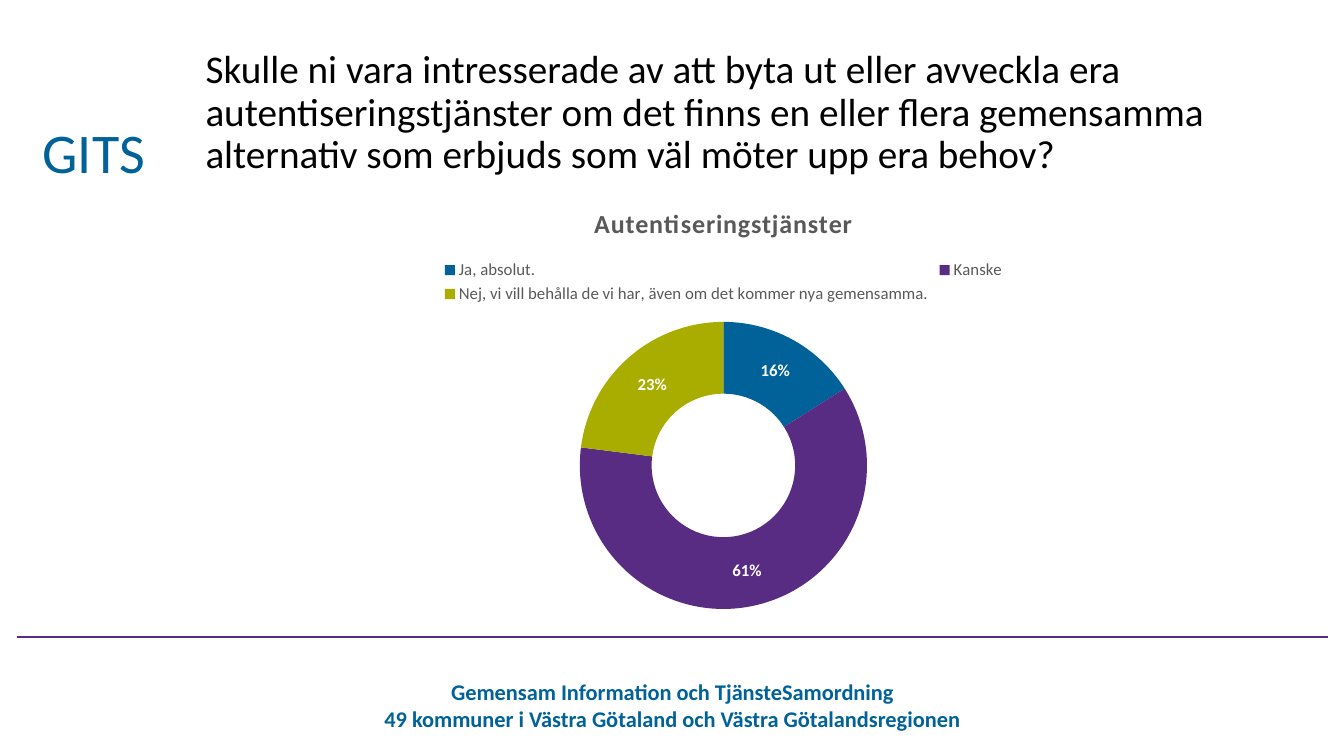
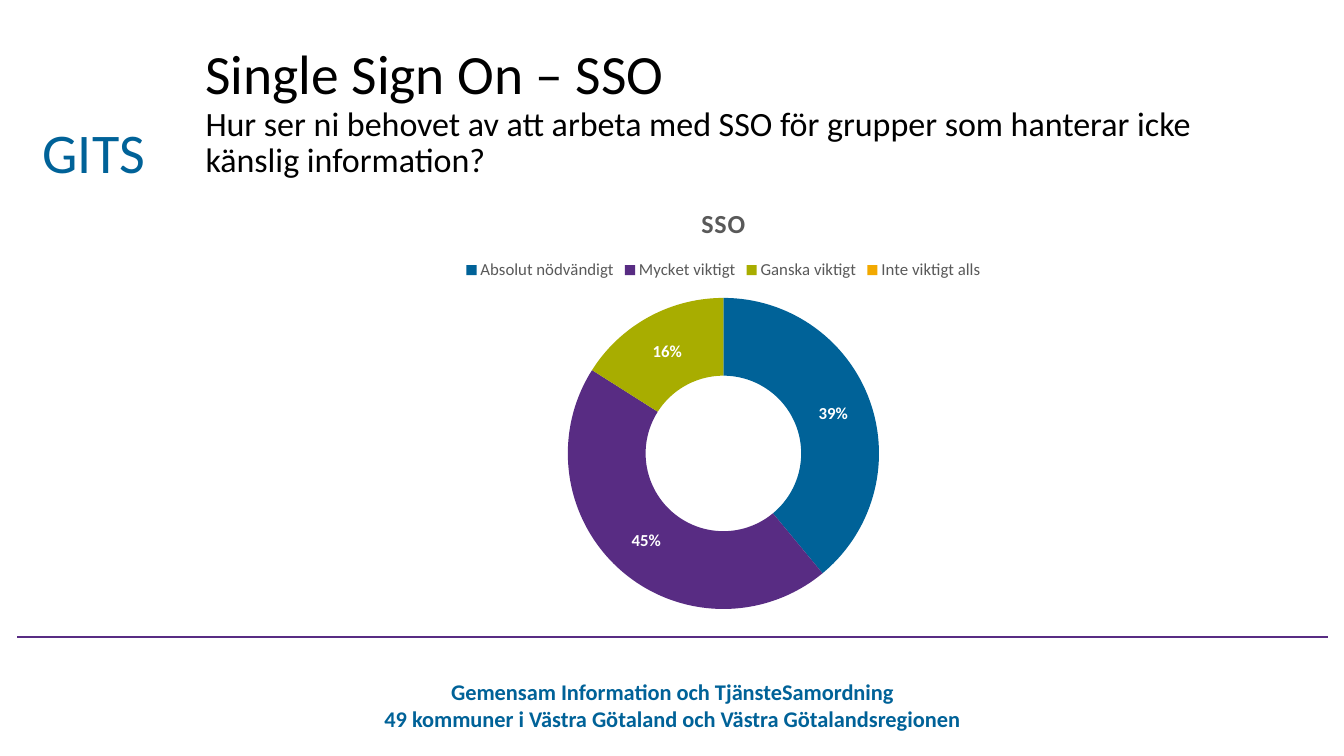
"""Build two GITS survey slides, each with a question and a doughnut chart."""
from dataclasses import dataclass
from typing import Any

from lxml import etree
from pptx import Presentation
from pptx.chart.data import CategoryChartData
from pptx.dml.color import RGBColor
from pptx.enum.chart import XL_CHART_TYPE, XL_LEGEND_POSITION
from pptx.enum.shapes import MSO_CONNECTOR
from pptx.enum.text import MSO_ANCHOR, PP_ALIGN
from pptx.oxml.ns import qn
from pptx.slide import Slide
from pptx.util import Inches, Pt

DOUGHNUT = XL_CHART_TYPE.DOUGHNUT
LEGEND_TOP = XL_LEGEND_POSITION.TOP
STRAIGHT = MSO_CONNECTOR.STRAIGHT
ANCHOR_TOP, ANCHOR_MIDDLE = MSO_ANCHOR.TOP, MSO_ANCHOR.MIDDLE
LEFT, CENTER = PP_ALIGN.LEFT, PP_ALIGN.CENTER


@dataclass(frozen=True)
class Theme:
    font: str = "Calibri"
    black: str = "000000"
    white: str = "FFFFFF"
    grey: str = "595959"
    blue: str = "006298"
    purple: str = "582C83"
    green: str = "A8AD00"
    orange: str = "F2A900"
    brand_size: float = 40
    footer_size: float = 16
    chart_title_size: float = 18.6
    chart_text_size: float = 12
    chart_title_tracking: int = 50

    @property
    def series(self) -> tuple[str, ...]:
        return self.blue, self.purple, self.green, self.orange


@dataclass(frozen=True)
class Box:
    left: float
    top: float
    width: float
    height: float

    def lengths(self) -> tuple[int, ...]:
        return tuple(Inches(value) for value in (self.left, self.top, self.width, self.height))


@dataclass(frozen=True)
class Line:
    text: str
    size: float


@dataclass(frozen=True)
class Survey:
    heading: tuple[Line, ...]
    chart_title: str
    answers: dict[str, int]


THEME = Theme()
SLIDE_WIDTH, SLIDE_HEIGHT = 13.33, 7.5
TITLE_BOX = Box(1.94, 0.4, 10.47, 1.45)
CHART_BOX = Box(1.94, 1.85, 10.47, 4.33)
BRAND_BOX = Box(0.31, 1.12, 1.24, 0.77)
FOOTER_BOX = Box(3.18, 6.68, 6.98, 0.64)
RULE_LEFT, RULE_RIGHT, RULE_TOP = 0.17, 13.17, 6.32
FOOTER = (
    "Gemensam Information och TjänsteSamordning",
    "49 kommuner i Västra Götaland och Västra Götalandsregionen",
)
SURVEYS = (
    Survey(
        (Line("Skulle ni vara intresserade av att byta ut eller avveckla era "
              "autentiseringstjänster om det finns en eller flera gemensamma "
              "alternativ som erbjuds som väl möter upp era behov?", 28),),
        "Autentiseringstjänster",
        {
            "Ja, absolut.": 16,
            "Kanske": 61,
            "Nej, vi vill behålla de vi har, även om det kommer nya gemensamma.": 23,
        },
    ),
    Survey(
        (
            Line("Single Sign On – SSO", 39.6),
            Line("Hur ser ni behovet av att arbeta med SSO för grupper som hanterar "
                 "icke känslig information?", 24.3),
        ),
        "SSO",
        {
            "Absolut nödvändigt": 39,
            "Mycket viktigt": 45,
            "Ganska viktigt": 16,
            "Inte viktigt alls": 0,
        },
    ),
)


def style_font(font: Any, size: float, color: str, bold: bool = False) -> None:
    values = {"name": THEME.font, "size": Pt(size), "bold": bold}
    for attribute, value in values.items():
        setattr(font, attribute, value)
    font.color.rgb = RGBColor.from_string(color)


def add_text(slide: Slide, box: Box, paragraphs: tuple[tuple[Line, ...], ...], color: str,
             bold: bool = False, alignment: PP_ALIGN = CENTER,
             anchor: MSO_ANCHOR = ANCHOR_TOP, line_spacing: float = 1.0) -> None:
    frame = slide.shapes.add_textbox(*box.lengths()).text_frame
    frame.word_wrap = True
    frame.vertical_anchor = anchor
    for index, lines in enumerate(paragraphs):
        paragraph = frame.add_paragraph() if index else frame.paragraphs[0]
        paragraph.alignment = alignment
        paragraph.line_spacing = line_spacing
        for position, line in enumerate(lines):
            if position:
                paragraph.add_line_break()
            run = paragraph.add_run()
            run.text = line.text
            style_font(run.font, line.size, color, bold)


def add_frame(slide: Slide) -> None:
    footer = tuple((Line(text, THEME.footer_size),) for text in FOOTER)
    add_text(slide, FOOTER_BOX, footer, THEME.blue, bold=True)
    add_text(slide, BRAND_BOX, ((Line("GITS", THEME.brand_size),),), THEME.blue)
    rule = slide.shapes.add_connector(
        STRAIGHT, Inches(RULE_LEFT), Inches(RULE_TOP), Inches(RULE_RIGHT), Inches(RULE_TOP))
    rule.line.color.rgb = RGBColor.from_string(THEME.purple)
    rule.line.width = Pt(1)
    etree.SubElement(rule._element.spPr, qn("a:effectLst"))


def add_doughnut(slide: Slide, survey: Survey) -> None:
    data = CategoryChartData()
    data.categories = list(survey.answers)
    data.add_series(survey.chart_title, list(survey.answers.values()))
    chart = slide.shapes.add_chart(DOUGHNUT, *CHART_BOX.lengths(), data).chart
    style_font(chart.font, 10, THEME.black)

    chart.has_title = True
    paragraph = chart.chart_title.text_frame.paragraphs[0]
    run = paragraph.add_run()
    run.text = survey.chart_title
    style_font(run.font, THEME.chart_title_size, THEME.grey, bold=True)
    run._r.get_or_add_rPr().set("spc", str(THEME.chart_title_tracking))

    chart.has_legend = True
    chart.legend.position = LEGEND_TOP
    chart.legend.include_in_layout = False
    style_font(chart.legend.font, THEME.chart_text_size, THEME.grey)

    plot = chart.plots[0]
    plot.vary_by_categories = True
    series = plot.series[0]
    for index, color in enumerate(THEME.series[:len(survey.answers)]):
        fill = series.points[index].format.fill
        fill.solid()
        fill.fore_color.rgb = RGBColor.from_string(color)

    labels = series.data_labels
    label_values = {
        "show_value": False,
        "show_percentage": True,
        "number_format": "0%",
        "number_format_is_linked": False,
    }
    for attribute, value in label_values.items():
        setattr(labels, attribute, value)
    style_font(labels.font, THEME.chart_text_size, THEME.white, bold=True)


def main() -> None:
    presentation = Presentation()
    presentation.slide_width = Inches(SLIDE_WIDTH)
    presentation.slide_height = Inches(SLIDE_HEIGHT)
    blank_layout = presentation.slide_layouts[6]
    for survey in SURVEYS:
        slide = presentation.slides.add_slide(blank_layout)
        add_frame(slide)
        add_text(slide, TITLE_BOX, (survey.heading,), THEME.black,
                 alignment=LEFT, anchor=ANCHOR_MIDDLE, line_spacing=0.9)
        add_doughnut(slide, survey)
    presentation.save("out.pptx")


if __name__ == "__main__":
    main()
